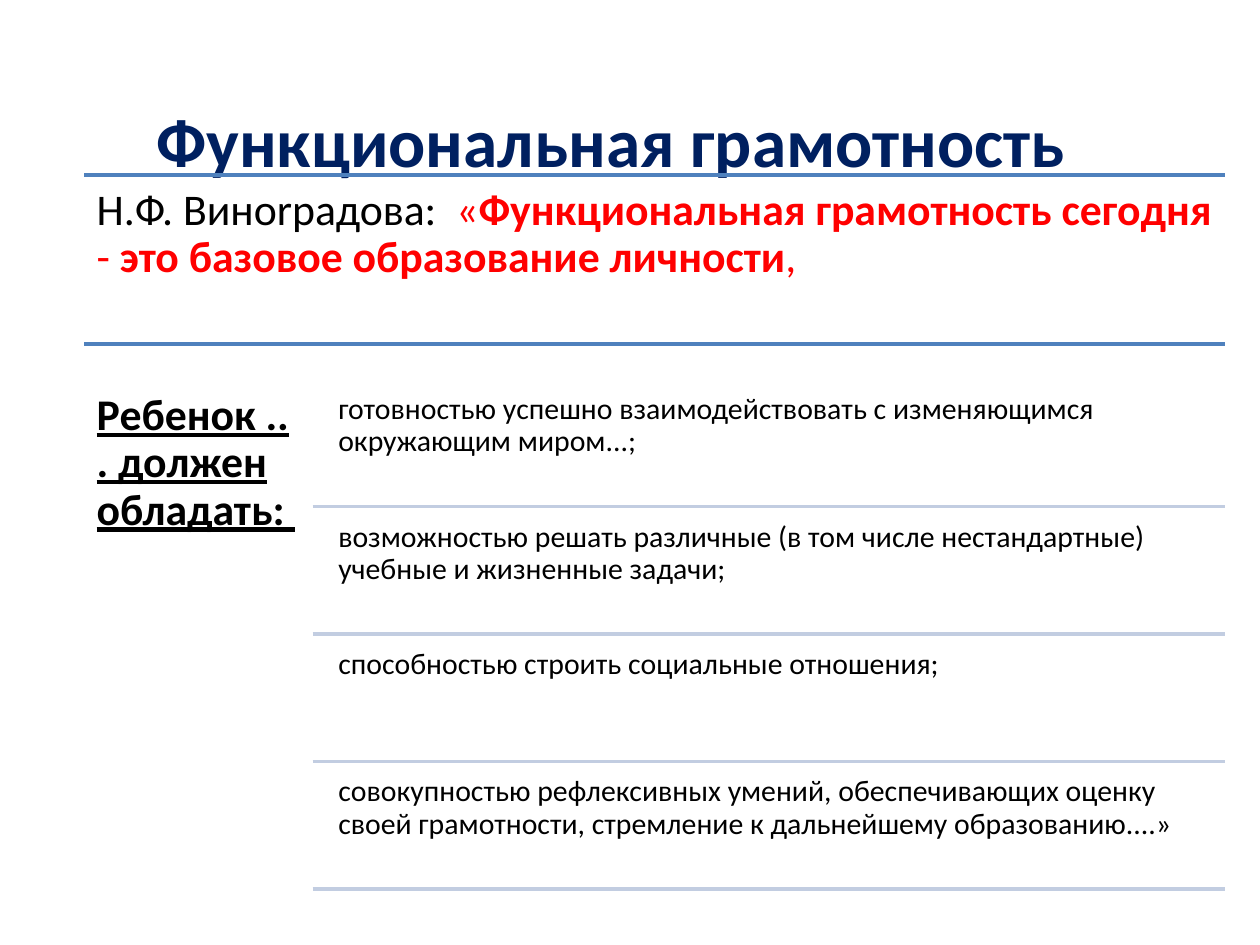
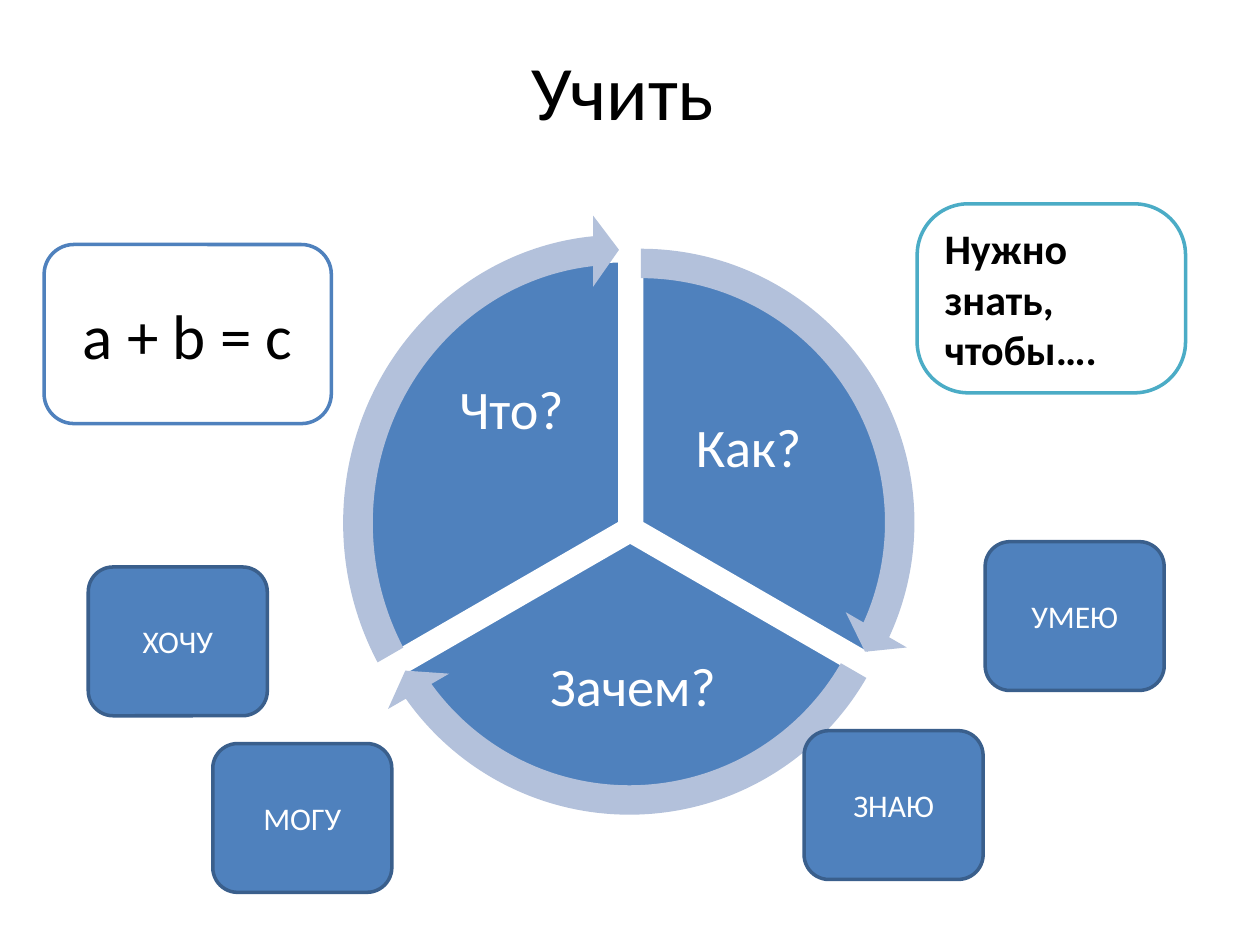
from lxml import etree
from pptx import Presentation
from pptx.dml.color import RGBColor
from pptx.enum.shapes import MSO_CONNECTOR, MSO_SHAPE
from pptx.enum.text import MSO_ANCHOR, PP_ALIGN
from pptx.oxml.ns import qn
from pptx.util import Cm, Pt

LEFT, CENTER = PP_ALIGN.LEFT, PP_ALIGN.CENTER
TOP, MIDDLE = MSO_ANCHOR.TOP, MSO_ANCHOR.MIDDLE
STRAIGHT = MSO_CONNECTOR.STRAIGHT
PIE, ARROW, ROUNDED = MSO_SHAPE.PIE, MSO_SHAPE.CIRCULAR_ARROW, MSO_SHAPE.ROUNDED_RECTANGLE


class Theme:
    font = "Calibri"
    black = RGBColor.from_string("000000")
    white = RGBColor.from_string("FFFFFF")
    navy = RGBColor.from_string("002060")
    red = RGBColor.from_string("FF0000")
    blue = RGBColor.from_string("4F81BD")
    dark_blue = RGBColor.from_string("3A5F8C")
    pale_rule = RGBColor.from_string("C2CDE1")
    pale_arrow = RGBColor.from_string("B3C1DB")
    teal = RGBColor.from_string("4BACC6")
    line = Pt(2)
    title = 44
    long_title = 39.6
    formula = 36
    question = 31
    lead = 25
    remark = 24
    card = 18
    row = 17


def write(sp, text, size, color=Theme.black, bold=False, underline=False,
          align=LEFT, anchor=MIDDLE, inset=(0.25, 0.13, 0.25, 0.13), spacing=None):
    tf = sp.text_frame
    tf.word_wrap = True
    tf.vertical_anchor = anchor
    tf.margin_left, tf.margin_top, tf.margin_right, tf.margin_bottom = map(Cm, inset)
    p = tf.paragraphs[0]
    p.alignment = align
    p.line_spacing = spacing
    runs = [(text, {})] if isinstance(text, str) else text
    for words, own in runs:
        r = p.add_run()
        r.text = words
        r.font.name = Theme.font
        r.font.size = Pt(size)
        r.font.bold = own.get("bold", bold)
        r.font.underline = underline
        r.font.color.rgb = own.get("color", color)


def add_shape(slide, kind, box, fill, line=None, adj=()):
    sp = slide.shapes.add_shape(kind, *map(Cm, box))
    sp.shadow.inherit = False
    sp.fill.solid()
    sp.fill.fore_color.rgb = fill
    if line is None:
        sp.line.fill.background()
    else:
        sp.line.color.rgb = line
        sp.line.width = Theme.line
    for i, value in enumerate(adj):
        sp.adjustments[i] = value
    return sp


prs = Presentation()
prs.slide_width, prs.slide_height = Cm(25.4), Cm(19.05)
blank = prs.slide_layouts[6]

literacy = prs.slides.add_slide(blank)
sp = literacy.shapes.add_textbox(Cm(0.89), Cm(0.33), Cm(22.86), Cm(3.18))
write(sp, "Функциональная грамотность", Theme.long_title, color=Theme.navy, bold=True,
      align=CENTER, inset=(0.25, 1.78, 0.25, 0))

red, red_bold = {"color": Theme.red}, {"color": Theme.red, "bold": True}
quote = [
    ("Н.Ф. Виноrрадова: ", {}),
    (" «", red),
    ("Функциональная грамотность сегодня", red_bold),
    (" - ", red),
    ("это базовое образование личности", red_bold),
    (",", red),
]
sp = literacy.shapes.add_textbox(Cm(1.7), Cm(3.53), Cm(23), Cm(4.14))
write(sp, quote, Theme.lead, anchor=TOP, inset=[0.25] * 4, spacing=0.9)

sp = literacy.shapes.add_textbox(Cm(1.7), Cm(7.67), Cm(4.6), Cm(10.39))
write(sp, [("Ребенок ... должен обладать:", {}), (" ", {"bold": False})], Theme.lead,
      bold=True, underline=True, anchor=TOP, inset=[0.25] * 4, spacing=0.9)

skills = [
    "готовностью успешно взаимодействовать с изменяющимся окружающим миром...;",
    "возможностью решать различные (в том числе нестандартные) учебные и жизненные задачи;",
    "способностью строить социальные отношения;",
    "совокупностью рефлексивных умений, обеспечивающих оценку своей грамотности, "
    "стремление к дальнейшему образованию....»",
]
rules = [(1.7, 3.53, Theme.blue), (1.7, 6.93, Theme.blue)]
row_height, row_pitch = 2.44, 2.57
for i, skill in enumerate(skills):
    top = 7.77 + i * row_pitch
    sp = literacy.shapes.add_textbox(Cm(6.65), Cm(top), Cm(18.06), Cm(row_height))
    write(sp, skill, Theme.row, anchor=TOP, inset=[0.17] * 4, spacing=0.9)
    rules.append((6.3, top + row_height, Theme.pale_rule))

for left, y, color in rules:
    rule = literacy.shapes.add_connector(STRAIGHT, Cm(left), Cm(y), Cm(24.7), Cm(y))
    rule.line.color.rgb = color
    rule.line.width = Theme.line
    etree.SubElement(rule._element.spPr, qn("a:effectLst"))

teaching = prs.slides.add_slide(blank)
sp = teaching.shapes.add_textbox(Cm(1.3), Cm(0.53), Cm(22.86), Cm(2.57))
write(sp, "Учить ", Theme.title, align=CENTER)

sectors = [
    ("Как?", (7.65, 5.26), (162, 18), (13.21, 7.49, 3.76, 3.15)),
    ("Зачем?", (7.42, 5.64), (18, 90), (9.93, 12.5, 5.66, 2.77)),
    ("Что?", (7.21, 5.26), (90, 162), (8.43, 6.73, 3.76, 3.15)),
]
for question, corner, angles, label_box in sectors:
    add_shape(teaching, PIE, (*corner, 10.57, 10.57), Theme.blue, Theme.white, angles)
    sp = teaching.shapes.add_textbox(*map(Cm, label_box))
    write(sp, question, Theme.question, color=Theme.white, align=CENTER,
          inset=[0.1] * 4, spacing=0.9)

arrows = [
    ((6.99, 4.6, 11.86, 11.86), 14.73, 161.99),
    ((6.76, 4.98, 11.86, 11.86), 86.72, 18),
    ((6.5, 4.32, 11.96, 12.45), 158.73, 90),
]
for box, head, tail in arrows:
    add_shape(teaching, ARROW, box, Theme.pale_arrow, adj=(0.05, 3.27, head, tail, 0.06))

sp = add_shape(teaching, ROUNDED, (18.49, 4.11, 5.41, 3.81), Theme.white, Theme.teal, [0.27])
write(sp, "Нужно знать, чтобы….", Theme.remark, bold=True)
sp = add_shape(teaching, ROUNDED, (0.89, 4.93, 5.79, 3.61), Theme.white, Theme.blue)
write(sp, "a + b = c", Theme.formula, align=CENTER)

cards = [
    ("ХОЧУ", 1.78, 11.43),
    ("МОГУ", 4.29, 14.99),
    ("УМЕЮ", 19.86, 10.92),
    ("ЗНАЮ", 16.21, 14.73),
]
for word, left, top in cards:
    sp = add_shape(teaching, ROUNDED, (left, top, 3.61, 3), Theme.blue, Theme.dark_blue)
    write(sp, word, Theme.card, color=Theme.white, align=CENTER)

prs.save("out.pptx")
